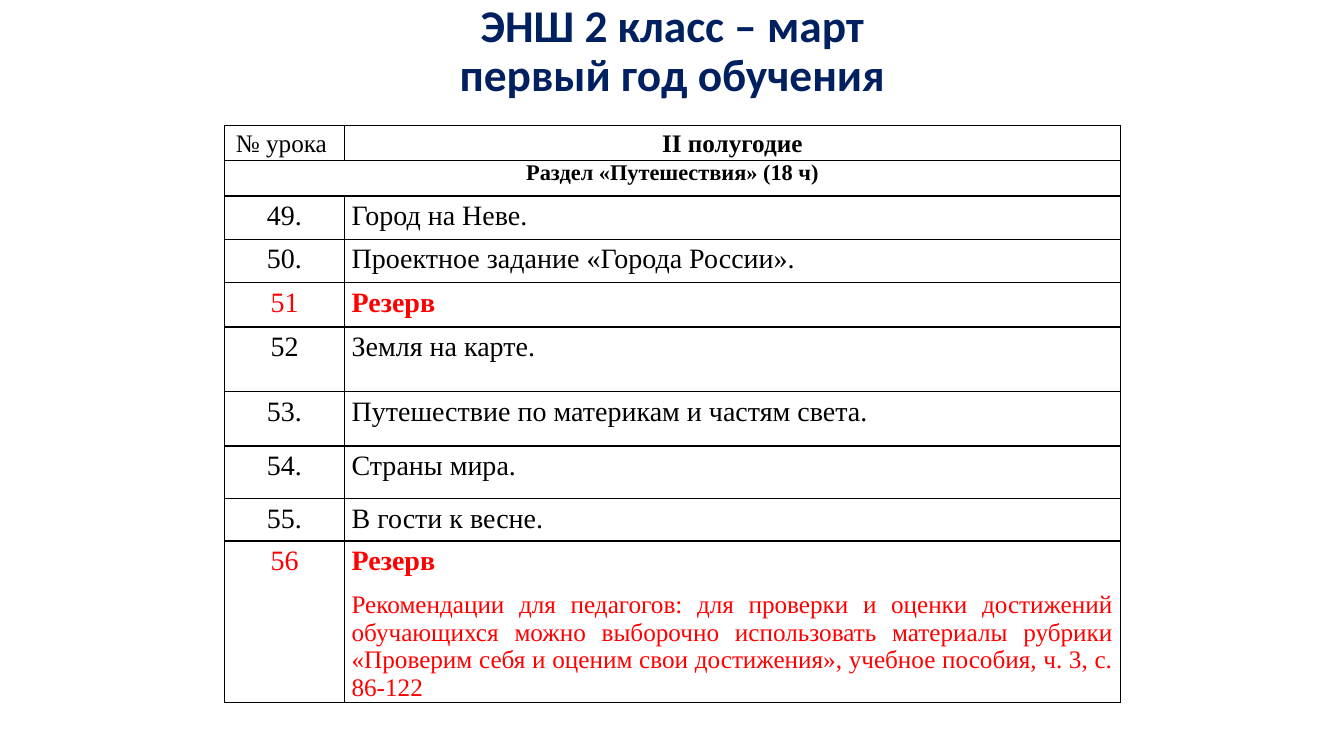
from lxml import etree
from pptx import Presentation
from pptx import util as u
from pptx.dml.color import RGBColor
from pptx.enum import text
from pptx.oxml.ns import qn

NAVY, BLACK, RED = "002060", "000000", "FF0000"
CENTER, LEFT, JUSTIFY = text.PP_ALIGN.CENTER, text.PP_ALIGN.LEFT, text.PP_ALIGN.JUSTIFY

ADVICE = (
    "Рекомендации для педагогов: для проверки и оценки достижений обучающихся "
    "можно выборочно использовать материалы рубрики «Проверим себя и оценим "
    "свои достижения», учебное пособия, ч. 3, с. 86-122"
)
LESSONS = [
    ("49.", "Город на Неве.", 1.09),
    ("50.", "Проектное задание «Города России».", 1.09),
    ("51", "Резерв", 1.12),
    ("52", "Земля на карте.", 1.63),
    ("53.", "Путешествие по материкам и частям света.", 1.37),
    ("54.", "Страны мира.", 1.32),
    ("55.", "В гости к весне.", 1.07),
    ("56", "Резерв", 2.62),
]


def color(value):
    return RGBColor.from_string(value)


class LessonSlide:
    title_font = "Calibri"
    table_font = "Times New Roman"

    def __init__(self, deck):
        self.slide = deck.slides.add_slide(deck.slide_layouts[5])

    def style(self, para, font, size, shade, bold, align, spacing, after=0):
        para.alignment = align
        para.line_spacing = spacing
        para.space_before = u.Pt(0)
        para.space_after = u.Pt(after)
        for span in para.runs:
            span.font.name = font
            span.font.size = u.Pt(size)
            span.font.bold = bold
            span.font.color.rgb = color(shade)

    def title(self, wording, left, top, width, height):
        box = self.slide.shapes.title
        box.left, box.top = u.Cm(left), u.Cm(top)
        box.width, box.height = u.Cm(width), u.Cm(height)
        frame = box.text_frame
        frame.text = wording
        frame.auto_size = text.MSO_AUTO_SIZE.NONE
        frame.vertical_anchor = text.MSO_ANCHOR.MIDDLE
        self.style(frame.paragraphs[0], self.title_font, 32.4, NAVY, True, CENTER, 0.9)

    def table(self, left, top, widths, heights):
        table = self.slide.shapes.add_table(
            len(heights), len(widths), u.Cm(left), u.Cm(top),
            u.Cm(sum(widths)), u.Cm(sum(heights)),
        ).table
        table.first_row = table.horz_banding = False
        for column, width in zip(table.columns, widths):
            column.width = u.Cm(width)
        for row, height in zip(table.rows, heights):
            row.height = u.Cm(height)
        for cell in table.iter_cells():
            cell.margin_left = cell.margin_right = u.Cm(0.18)
            cell.margin_top = cell.margin_bottom = 0
            self.borders(cell)
            cell.fill.background()
        return table

    def borders(self, cell):
        properties = cell._tc.get_or_add_tcPr()
        for side in ("a:lnL", "a:lnR", "a:lnT", "a:lnB"):
            line = etree.SubElement(properties, qn(side), w=str(u.Pt(1)))
            fill = etree.SubElement(line, qn("a:solidFill"))
            etree.SubElement(fill, qn("a:srgbClr"), val=BLACK)

    def cell_text(self, cell, wording, size, shade=BLACK, bold=False, align=CENTER,
                  spacing=1.15, after=0):
        para = cell.text_frame.paragraphs[0]
        para.text = wording
        self.style(para, self.table_font, size, shade, bold, align, spacing, after)

    def cell_note(self, cell, wording):
        para = cell.text_frame.add_paragraph()
        para.text = wording
        self.style(para, self.table_font, 18, RED, False, JUSTIFY, 1.0, 6)


def main():
    deck = Presentation()
    deck.slide_width, deck.slide_height = u.Cm(33.87), u.Cm(19.05)
    page = LessonSlide(deck)
    page.title("ЭНШ 2 класс – март\vпервый год обучения", 2.34, 0.48, 29.21, 1.68)

    heights = [0.89, 0.89] + [height for _, _, height in LESSONS]
    table = page.table(5.66, 3.16, [3.02, 19.55], heights)
    page.cell_text(table.cell(0, 0), "№ урока ", 18)
    page.cell_text(table.cell(0, 1), "II полугодие", 18, bold=True)
    table.cell(1, 0).merge(table.cell(1, 1))
    page.cell_text(table.cell(1, 0), "Раздел «Путешествия» (18 ч)", 16, bold=True, spacing=1.0)

    for row, (number, topic, _) in enumerate(LESSONS, start=2):
        reserve = topic == "Резерв"
        shade = RED if reserve else BLACK
        page.cell_text(table.cell(row, 0), number, 20, shade, after=10)
        page.cell_text(table.cell(row, 1), topic, 20, shade, reserve, LEFT, after=10)
    page.cell_note(table.cell(len(heights) - 1, 1), ADVICE)

    deck.save("out.pptx")


if __name__ == "__main__":
    main()
